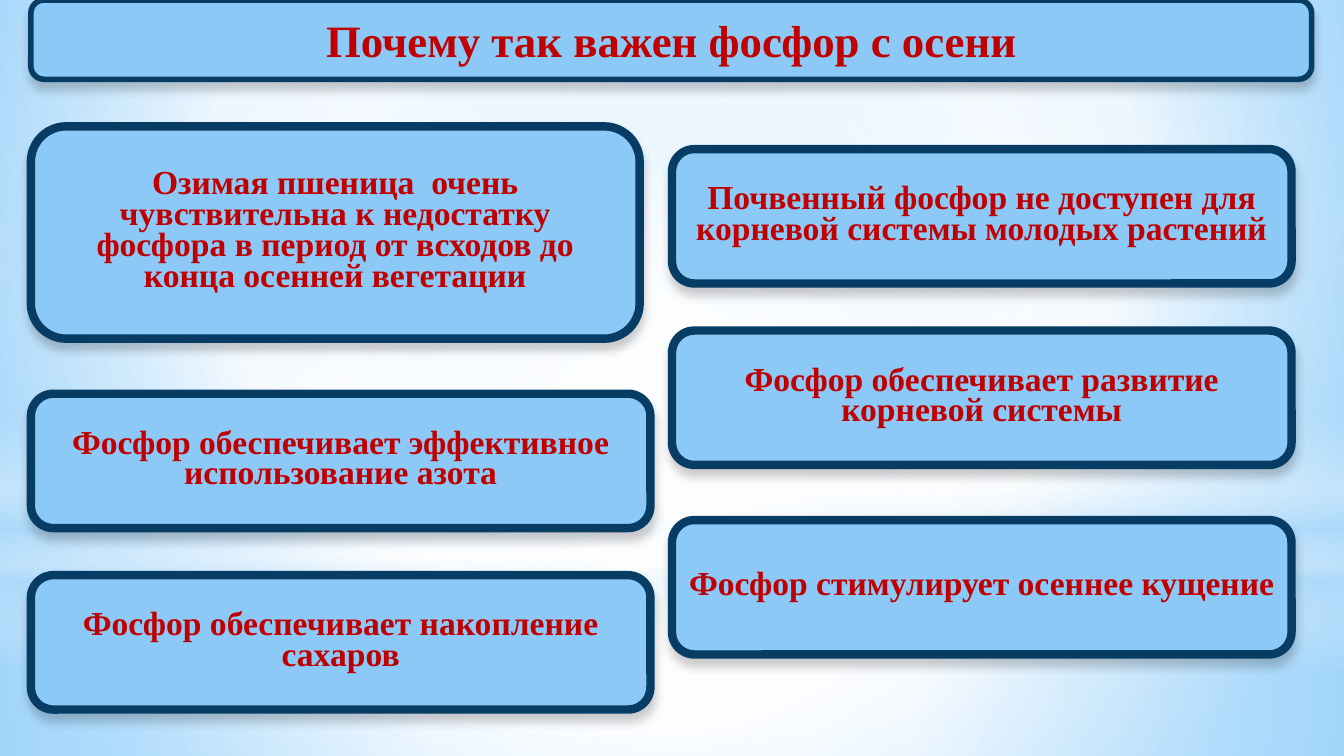
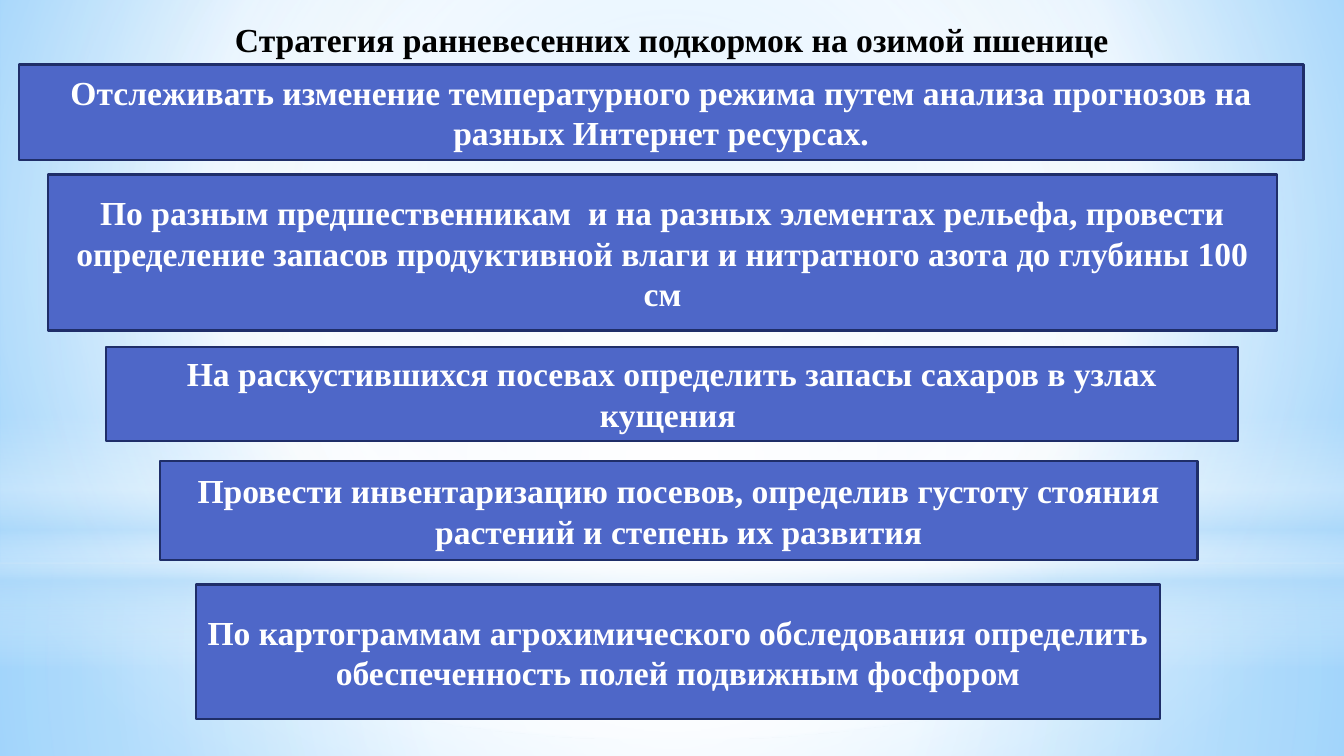
from pptx import Presentation
from pptx.dml.color import RGBColor
from pptx.enum.shapes import MSO_SHAPE
from pptx.enum.text import MSO_ANCHOR, MSO_AUTO_SIZE, PP_ALIGN
from pptx.oxml import parse_xml
from pptx.oxml.ns import nsdecls, qn
from pptx.util import Inches, Pt

RECT, ROUND, OVAL = MSO_SHAPE.RECTANGLE, MSO_SHAPE.ROUNDED_RECTANGLE, MSO_SHAPE.OVAL
TOP, MIDDLE = MSO_ANCHOR.TOP, MSO_ANCHOR.MIDDLE
CENTER = PP_ALIGN.CENTER
NO_FIT = MSO_AUTO_SIZE.NONE

FONT = "Times New Roman"
SKY = RGBColor(0x8C, 0xC9, 0xF7)
NAVY = RGBColor(0x07, 0x3C, 0x65)
RED = RGBColor(0xC0, 0x00, 0x00)
BLUE = RGBColor(0x4E, 0x67, 0xC8)
DARK_BLUE = RGBColor(0x1F, 0x2E, 0x69)
WHITE = RGBColor(0xFF, 0xFF, 0xFF)
BLACK = RGBColor(0x00, 0x00, 0x00)
PALE = RGBColor(0xB4, 0xDC, 0xFA)
BG_INNER = RGBColor(0x9E, 0xD5, 0xFF)
BG_OUTER = RGBColor(0x5B, 0xB9, 0xFF)

CARD = {"fill": SKY, "line": NAVY, "width": 4.5, "shadow": True,
        "color": RED, "size": 18, "spacing": 16.5, "anchor": MIDDLE}
BANNER = {**CARD, "width": 3, "size": 24, "spacing": None}
STEP = {"fill": BLUE, "line": DARK_BLUE, "width": 1.25, "color": WHITE,
        "size": 18, "anchor": MIDDLE}
HEADING = {"color": BLACK, "size": 18, "anchor": TOP}


def set_gradient(parent, stops, center):
    gs = "".join(f'<a:gs pos="{pos * 1000}"><a:srgbClr val="{color}">'
                 f'<a:alpha val="{alpha * 1000}"/></a:srgbClr></a:gs>'
                 for pos, color, alpha in stops)
    if center:
        rect = " ".join(f'{side}="{v * 1000}"' for side, v in zip("ltrb", center))
        way = f'<a:path path="circle"><a:fillToRect {rect}/></a:path>'
    else:
        way = '<a:lin ang="5400000" scaled="0"/>'
    grad = parse_xml(f'<a:gradFill {nsdecls("a")} rotWithShape="1">'
                     f'<a:gsLst>{gs}</a:gsLst>{way}</a:gradFill>')
    parent.replace(parent.find(qn("a:solidFill")), grad)


def style_box(sp, text, fmt):
    if "fill" in fmt:
        sp.fill.solid()
        sp.fill.fore_color.rgb = fmt["fill"]
        sp.line.color.rgb = fmt["line"]
        sp.line.width = Pt(fmt["width"])
    sp.shadow.inherit = False
    if fmt.get("shadow"):
        effects = sp.element.spPr.find(qn("a:effectLst"))
        effects.append(parse_xml(
            f'<a:outerShdw {nsdecls("a")} blurRad="{Pt(5)}" dist="{Pt(4)}" dir="5400000" '
            'rotWithShape="0"><a:srgbClr val="000000"><a:alpha val="20000"/>'
            '</a:srgbClr></a:outerShdw>'))
    tf = sp.text_frame
    frame = {"word_wrap": True, "auto_size": NO_FIT, "vertical_anchor": fmt["anchor"],
             "margin_left": Inches(0.07), "margin_right": Inches(0.07),
             "margin_top": Inches(0.04), "margin_bottom": Inches(0.04)}
    for name, value in frame.items():
        setattr(tf, name, value)
    p = tf.paragraphs[0]
    p.alignment = CENTER
    if fmt.get("spacing"):
        p.line_spacing = Pt(fmt["spacing"])
    r = p.add_run()
    r.text = text
    for name, value in {"name": FONT, "size": Pt(fmt["size"]), "bold": True}.items():
        setattr(r.font, name, value)
    r.font.color.rgb = fmt["color"]


prs = Presentation()
prs.slide_width = Inches(10)
prs.slide_height = prs.slide_width * 9 // 16
master = prs.slide_master
title_only, blank = prs.slide_layouts[5], prs.slide_layouts[6]
s1 = prs.slides.add_slide(blank)
s2 = prs.slides.add_slide(title_only)

master.background.fill.solid()
set_gradient(next(master.element.iter(qn("p:bgPr"))),
             [(0, BG_INNER, 100), (60, WHITE, 100), (100, BG_OUTER, 100)], (20, 10, 20, 60))

MID = (50, 50, 50, 50)
glows = [
    (RECT, 4.19, 1.44, [(0, WHITE, 91), (37, WHITE, 76), (100, PALE, 79)], MID),
    (RECT, 0, 4.19, [(0, WHITE, 89), (48, WHITE, 62), (100, PALE, 79)], MID),
    (RECT, 3.09, 1.88, [(0, WHITE, 0), (29, WHITE, 30), (45, PALE, 40),
                        (55, WHITE, 26), (65, PALE, 60), (100, WHITE, 0)], None),
    (OVAL, 1.31, 4.19, [(0, WHITE, 100), (56, WHITE, 0)], MID),
]
for i, (kind, top, height, stops, center) in enumerate(glows):
    sp = s1.shapes.add_shape(kind, 0, Inches(top), Inches(10), Inches(height))
    sp.fill.solid()
    sp.line.fill.background()
    sp.shadow.inherit = False
    set_gradient(sp.element.spPr, stops, center)
    sp.element.nvSpPr.cNvPr.set("id", str(100 + i))
    master.shapes.element.insert(2 + i, sp.element)

banner = s1.shapes.add_shape(ROUND, *map(Inches, (0.23, 0, 9.53, 0.59)))
style_box(banner, "Почему так важен фосфор с осени", BANNER)

title = s2.shapes.title
title.left, title.top, title.width, title.height = map(Inches, (0, 0.1, 10, 0.38))
style_box(title, "Стратегия ранневесенних подкормок на озимой пшенице", HEADING)

cards = [
    (0.23, 0.94, 4.53, 1.58, "Озимая пшеница  очень чувствительна к недостатку фосфора "
                             "в период от всходов до конца осенней вегетации"),
    (5, 2.46, 4.61, 1, "Фосфор обеспечивает развитие корневой системы"),
    (5, 1.11, 4.61, 1, "Почвенный фосфор не доступен для корневой системы молодых растений"),
    (0.23, 2.93, 4.61, 1, "Фосфор обеспечивает эффективное использование азота"),
    (5, 3.87, 4.61, 1, "Фосфор стимулирует осеннее кущение"),
    (0.23, 4.28, 4.61, 1, "Фосфор обеспечивает накопление сахаров"),
]
steps = [
    (0.14, 0.48, 9.56, 0.71, "Отслеживать изменение температурного режима путем анализа "
                             "прогнозов на разных Интернет ресурсах."),
    (0.36, 1.3, 9.14, 1.16, "По разным предшественникам  и на разных элементах рельефа, "
                            "провести определение запасов продуктивной влаги "
                            "и нитратного азота до глубины 100 см"),
    (0.79, 2.58, 8.42, 0.7, "На раскустившихся посевах определить запасы сахаров "
                            "в узлах кущения "),
    (1.19, 3.43, 7.72, 0.74, "Провести инвентаризацию посевов, определив густоту стояния "
                             "растений и степень их развития"),
    (1.46, 4.35, 7.17, 1, "По картограммам агрохимического обследования определить "
                          "обеспеченность полей подвижным фосфором"),
]
for s, kind, boxes, fmt in [(s1, ROUND, cards, CARD), (s2, RECT, steps, STEP)]:
    for *box, text in boxes:
        sp = s.shapes.add_shape(kind, *map(Inches, box))
        style_box(sp, text, fmt)

prs.save("out.pptx")
